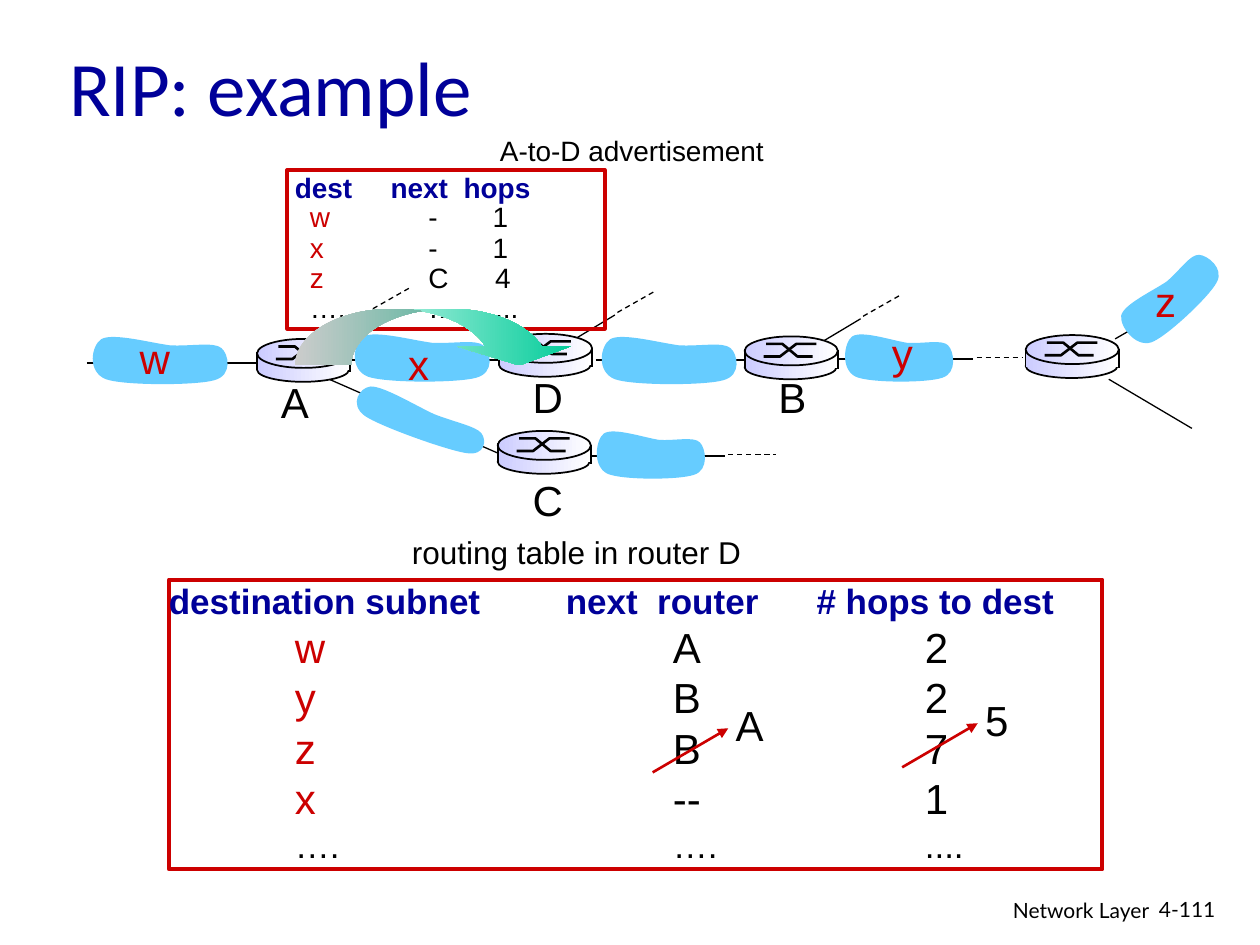
from dataclasses import dataclass
from typing import Any

from lxml.etree import SubElement
from pptx import Presentation
from pptx.dml.color import RGBColor
from pptx.enum.dml import MSO_LINE_DASH_STYLE as Dash
from pptx.enum.shapes import MSO_CONNECTOR as Connector, MSO_SHAPE as Shape
from pptx.enum.text import MSO_ANCHOR as Anchor, MSO_AUTO_SIZE as Fit, PP_ALIGN as Align
from pptx.oxml.ns import qn
from pptx.util import Inches, Pt

COLORS = {"ink": "000000", "navy": "000099", "red": "CC0000", "cloud": "66CCFF",
          "lilac": "CCCCFF", "white": "FFFFFF", "teal": "00CC99"}
CLOUD_START = (0.57, 0.24)
CLOUD_CURVES = [
    (0.43, 0.19), (0.18, 0), (0.1, 0.12),
    (0.03, 0.24), (0, 0.74), (0.13, 0.88),
    (0.25, 1), (0.74, 1), (0.87, 0.9),
    (1, 0.81), (0.97, 0.4), (0.92, 0.29),
    (0.87, 0.17), (0.71, 0.26), CLOUD_START,
]


def color(name):
    return RGBColor.from_string(COLORS[name])


def bend(shape):
    segments = list(shape._element.iter(qn("a:lnTo")))
    for first in range(0, len(segments), 3):
        curve, *others = segments[first:first + 3]
        curve.tag = qn("a:cubicBezTo")
        for other in others:
            curve.append(other[0])
            other.getparent().remove(other)


def write(para, text, size=24, tint="ink", bold=False, font="Arial"):
    span = para.add_run()
    span.text = text
    span.font.size = Pt(size)
    span.font.name = font
    span.font.bold = bold
    span.font.color.rgb = color(tint)


def set_tabs(para, stops):
    tabs = SubElement(para._p.get_or_add_pPr(), qn("a:tabLst"))
    for stop in stops:
        SubElement(tabs, qn("a:tab"), pos=str(Inches(stop)), algn="l")


@dataclass
class Sketch:
    deck: Any
    page: Any
    columns: float = 10
    rows: float = 7.5

    def across(self, columns):
        return round(self.deck.slide_width * columns / self.columns)

    def down(self, rows):
        return round(self.deck.slide_height * rows / self.rows)

    def area(self, left, top, width, height):
        return self.across(left), self.down(top), self.across(width), self.down(height)

    def text(self, area, text, align=Align.LEFT, anchor=Anchor.TOP, wrap=False, **style):
        box = self.page.shapes.add_textbox(*self.area(*area))
        frame = box.text_frame
        frame.word_wrap = wrap
        frame.auto_size = Fit.NONE if wrap else Fit.SHAPE_TO_FIT_TEXT
        frame.vertical_anchor = anchor
        frame.paragraphs[0].alignment = align
        write(frame.paragraphs[0], text, **style)

    def line(self, start, end, width=0.75, tint="ink", dashed=False, arrow=False):
        line = self.page.shapes.add_connector(
            Connector.STRAIGHT, self.across(start[0]), self.down(start[1]),
            self.across(end[0]), self.down(end[1]))
        line.line.color.rgb = color(tint)
        line.line.width = Pt(width)
        if dashed:
            line.line.dash_style = Dash.DASH
        if arrow:
            SubElement(line.line._get_or_add_ln(), qn("a:tailEnd"), type="triangle")
        SubElement(line._element.spPr, qn("a:effectLst"))

    def shape(self, kind, area, gradient=None, outline=None, width=1):
        shape = self.page.shapes.add_shape(kind, *self.area(*area))
        shape.shadow.inherit = False
        if gradient:
            shape.fill.gradient()
            shape.fill.gradient_angle = 0
            for stop, name in zip(shape.fill.gradient_stops, gradient):
                stop.color.rgb = color(name)
        else:
            shape.fill.background()
        if outline:
            shape.line.color.rgb = color(outline)
            shape.line.width = Pt(width)
        else:
            shape.line.fill.background()
        return shape

    def outline(self, points, close):
        spots = [(self.across(x), self.down(y)) for x, y in points]
        builder = self.page.shapes.build_freeform(*spots[0])
        builder.add_line_segments(spots[1:], close=close)
        shape = builder.convert_to_shape()
        shape.shadow.inherit = False
        return shape

    def zigzag(self, points):
        shape = self.outline(points, close=False)
        shape.fill.background()
        shape.line.color.rgb = color("ink")
        shape.line.width = Pt(1.5)

    def cloud(self, left, top, width=1.16, height=0.42, turn=0):
        shape = self.outline([(left + x * width, top + y * height)
                              for x, y in (CLOUD_START, *CLOUD_CURVES)], close=True)
        bend(shape)
        shape.fill.solid()
        shape.fill.fore_color.rgb = color("cloud")
        shape.line.fill.background()
        shape.rotation = turn

    def router(self, x, y):
        sheen = ("lilac", "white")
        self.shape(Shape.OVAL, (x, y + 0.15, 0.73, 0.19), sheen, "ink")
        self.shape(Shape.RECTANGLE, (x, y + 0.13, 0.74, 0.12), sheen)
        self.shape(Shape.OVAL, (x, y, 0.74, 0.23), sheen, "ink")
        for steps, heights in (((0.15, 0.28, 0.41, 0.57), (0.16, 0.16, 0.06, 0.06)),
                               ((0.17, 0.3, 0.42, 0.54), (0.06, 0.06, 0.16, 0.16))):
            self.zigzag([(x + dx, y + dy) for dx, dy in zip(steps, heights)])
        for side, drop in ((x, 0.1), (x + 0.74, 0.11)):
            self.line((side, y + drop), (side, y + drop + 0.15), 1)

    def spur(self, x, y):
        self.line((x, y), (x + 0.35, y - 0.21))
        self.line((x + 0.37, y - 0.23), (x + 0.67, y - 0.4), dashed=True)

    def listing(self, area, rows, size, edge_size, leading=1.0):
        box = self.shape(Shape.RECTANGLE, area, outline="red", width=2.25)
        frame = box.text_frame
        frame.margin_left = frame.margin_right = frame.margin_top = frame.margin_bottom = 0
        frame.vertical_anchor = Anchor.TOP
        frame.word_wrap = True
        frame.auto_size = Fit.SHAPE_TO_FIT_TEXT
        for index, (stops, cells) in enumerate(rows):
            para = frame.paragraphs[0] if index == 0 else frame.add_paragraph()
            para.alignment = Align.LEFT
            if index:
                para.line_spacing = leading
            set_tabs(para, [stop for stop in stops if stop])
            lead = "\t" if stops[0] else ""
            if index == 0:
                write(para, lead + "\t".join(cells), edge_size, "navy", True)
            elif index == len(rows) - 1:
                write(para, lead + "\t".join(cells), edge_size)
            else:
                write(para, lead + cells[0], size, "red")
                write(para, "\t" + "\t".join(cells[1:]), size)


def main():
    deck = Presentation()
    deck.slide_width, deck.slide_height = Inches(10), Inches(7.5)
    sketch = Sketch(deck, deck.slides.add_slide(deck.slide_layouts[6]))

    sketch.text((6.05, 7.07, 3.17, 0.31), "Network Layer", align=Align.RIGHT, wrap=True,
                size=12, font="Lato")
    sketch.text((9.1, 7.07, 0.74, 0.3), "4-111", wrap=True, size=12, font="Lato")

    for left, right, y, width in ((6.65, 7.72, 2.85, 0.75), (2.77, 4.12, 2.86, 1),
                                  (4.73, 6.09, 2.86, 1), (0.69, 2.05, 2.88, 1),
                                  (4.68, 5.75, 3.62, 0.75)):
        sketch.line((left, y), (right, y), width)
    for start, end in (((8.85, 2.69), (9.51, 2.31)), ((8.8, 3.01), (9.46, 3.4)),
                       ((2.59, 3), (3.96, 3.6))):
        sketch.line(start, end)
    for left, right, y in ((7.75, 8.12, 2.84), (5.78, 6.16, 3.61)):
        sketch.line((left, y), (right, y), dashed=True)

    for left, top in ((2.77, 2.62), (0.69, 2.64), (4.73, 2.64)):
        sketch.cloud(left, top)
    for left, top in ((6.67, 2.62), (4.7, 3.39)):
        sketch.cloud(left, top, 0.93)
    sketch.cloud(2.76, 3.18, height=0.31, turn=19.7)
    sketch.cloud(8.81, 2.15, 0.95, turn=316.8)

    for label, left, top, width in (("w", 1.01, 2.59, 0.44), ("x", 3.14, 2.64, 0.37),
                                    ("y", 6.98, 2.55, 0.37), ("z", 9.07, 2.14, 0.37)):
        sketch.text((left, top, width, 0.5), label, tint="red")
    for label, left, top, width in (("A", 2.13, 2.94, 0.42), ("C", 4.13, 3.72, 0.44),
                                    ("D", 4.13, 2.9, 0.44), ("B", 6.08, 2.9, 0.42)):
        sketch.text((left, top, width, 0.5), label)

    for spot in ((6.48, 2.74), (4.53, 2.71), (2.59, 2.68)):
        sketch.spur(*spot)
    for spot in ((3.96, 2.65), (5.91, 2.67), (8.14, 2.66), (3.95, 3.42), (2.04, 2.69)):
        sketch.router(*spot)

    wide = (1, 4, 6)
    sketch.listing((1.34, 4.6, 7.41, 2.3), [
        ((0, 3.15, 5.14), ("destination subnet", "next  router", "# hops to dest")),
        (wide, ("w", "A", "2")), (wide, ("y", "B", "2")), (wide, ("z", "B", "7")),
        (wide, ("x", "--", "1")), (wide, ("….", "….", "....")),
    ], 24, 20)
    sketch.text((3.17, 4.18, 2.81, 0.4), "routing table in router D", size=18)
    for label, x, y, width in (("A", 5.18, 6.13, 0.42), ("5", 7.16, 6.09, 0.39)):
        sketch.line((x, y), (x + 0.6, y - 0.35), 1.5, "red", arrow=True)
        sketch.text((x + 0.56, y - 0.63, width, 0.5), label)

    narrow, shifted = (0.18, 1.12, 1.63), (0.18, 1.12, 1.65)
    sketch.listing((2.28, 1.35, 2.52, 1.26), [
        ((0.06, 0.82, 1.4), ("dest", "next", "hops")),
        (narrow, ("w", "-", "1")), (narrow, ("x", "-", "1")), (shifted, ("z", "C", "4")),
        (shifted, ("….", "…", "...")),
    ], 16, 16, leading=0.9)
    sketch.text((3.87, 1.01, 2.3, 0.37), "A-to-D advertisement", size=16)
    arrow = sketch.shape(Shape.CURVED_DOWN_ARROW, (2.34, 2.45, 2.23, 0.45), ("white", "teal"))
    for index, value in enumerate((0.996, 1.992, 0.333)):
        arrow.adjustments[index] = value
    sketch.text((0.45, 0.21, 4.31, 0.94), "RIP: example", anchor=Anchor.MIDDLE, wrap=True,
                size=44, tint="navy", font="Calibri")

    deck.save("out.pptx")


if __name__ == "__main__":
    main()
